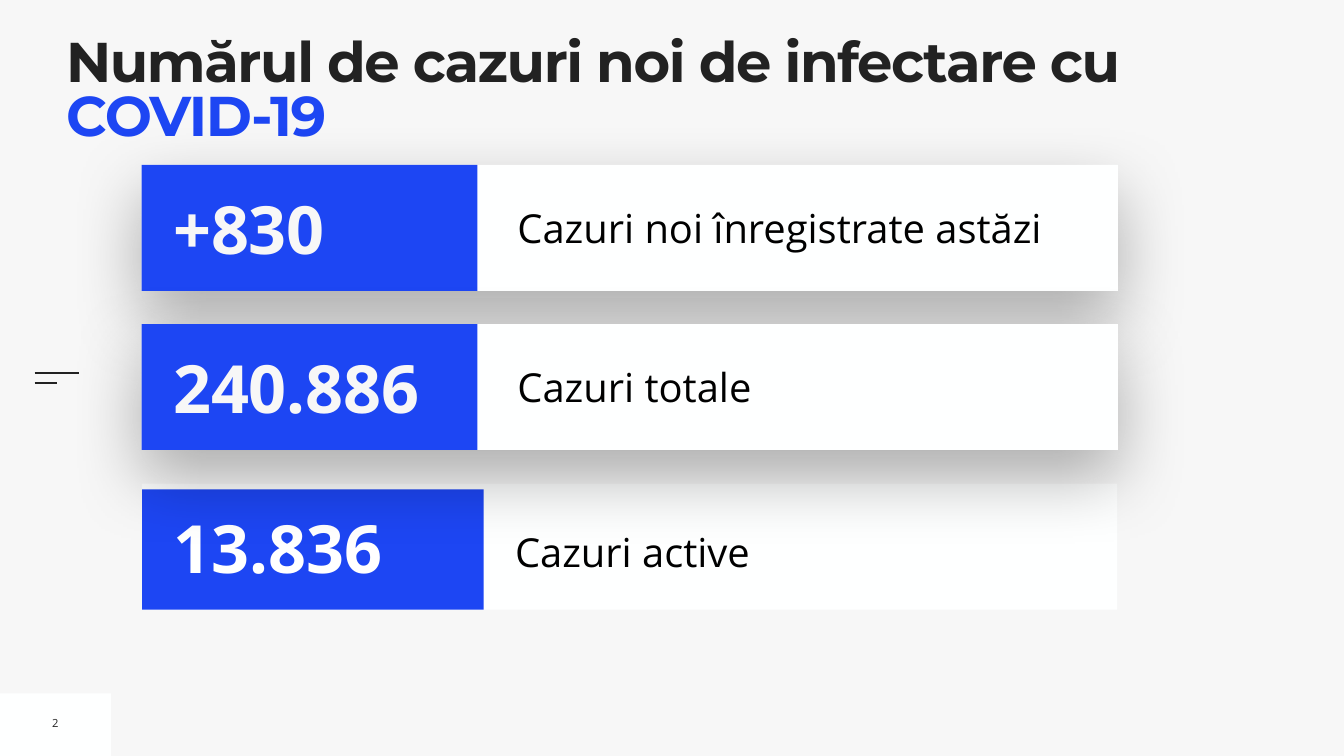
"""Build the slide with the daily COVID-19 case counts."""
from dataclasses import dataclass

from lxml.etree import SubElement
from pptx import Presentation
from pptx.dml.color import RGBColor as Rgb
from pptx.enum.shapes import MSO_CONNECTOR as Link, MSO_SHAPE as Form
from pptx.enum.text import MSO_ANCHOR as Anchor, MSO_AUTO_SIZE as Fit, PP_ALIGN as Align
from pptx.oxml import parse_xml
from pptx.oxml.ns import nsdecls, qn
from pptx.util import Cm, Pt


@dataclass(frozen=True)
class Theme:
    """Colours, fonts and type sizes."""
    back: Rgb = Rgb(0xF7, 0xF7, 0xF7)
    panel: Rgb = Rgb(0xFE, 0xFF, 0xFF)
    blue: Rgb = Rgb(0x1D, 0x46, 0xF3)
    dark: Rgb = Rgb(0x22, 0x22, 0x22)
    black: Rgb = Rgb(0, 0, 0)
    white: Rgb = Rgb(0xFF, 0xFF, 0xFF)
    head: str = "Montserrat"
    body: str = "Open Sans"
    title: int = 80
    count: int = 95
    label: int = 57
    page: int = 16


@dataclass(frozen=True)
class Box:
    """A rectangle in centimetres."""
    x: float
    y: float
    w: float
    h: float

    def cm(self) -> tuple:
        """Return the four lengths for a shape call."""
        return Cm(self.x), Cm(self.y), Cm(self.w), Cm(self.h)


@dataclass(frozen=True)
class Card:
    """A white panel with a blue count and a label."""
    count: str
    label: str
    panel: Box
    tag: Box
    value: Box
    text: Box
    tint: Rgb
    raised: bool = True


THEME = Theme()


def raised(count: str, label: str, y: float) -> Card:
    """Lay out a shadowed card from its top edge."""
    return Card(count, label, Box(7.14, y, 49.2, 6.35), Box(7.14, y, 16.92, 6.35),
                Box(8.48, y + 0.88, 15.32, 4.57), Box(25.83, y + 1.7, 29.87, 2.95),
                THEME.back)


CARDS = (
    Card("13.836", "Cazuri active", Box(7.16, 24.38, 49.15, 6.35),
         Box(7.16, 24.66, 17.22, 6.07), Box(8.51, 25.27, 15.32, 4.57),
         Box(25.96, 25.86, 29.41, 3.18), THEME.white, False),
    raised("+830", "Cazuri noi înregistrate astăzi", 8.31),
    raised("240.886", "Cazuri totale", 16.33),
)
RULES = ((18.82, 2.24), (19.28, 1.12))


def add_rect(slide, box: Box, fill: Rgb):
    """Add a plain filled rectangle."""
    rect = slide.shapes.add_shape(Form.RECTANGLE, *box.cm())
    rect.shadow.inherit = False
    rect.fill.solid()
    rect.fill.fore_color.rgb = fill
    rect.line.fill.background()
    return rect


def add_shadow(shape) -> None:
    """Cast a soft shadow below a shape."""
    props = shape._element.spPr
    props.remove(props.find(qn("a:effectLst")))
    props.append(parse_xml(
        f'<a:effectLst {nsdecls("a")}><a:outerShdw blurRad="{Pt(100)}" dist="{Pt(40)}" '
        'dir="5400000" rotWithShape="0"><a:srgbClr val="000000"><a:alpha val="30000"/>'
        '</a:srgbClr></a:outerShdw></a:effectLst>'))


def add_text(slide, box: Box, text: str, size: int, tint: Rgb,
             bold: bool = False, inset: float = 0.25, wrap: bool = True):
    """Add a middle-anchored line of text and return its paragraph."""
    frame = slide.shapes.add_textbox(*box.cm()).text_frame
    frame.word_wrap = wrap
    frame.vertical_anchor = Anchor.MIDDLE
    frame.margin_left = frame.margin_right = Cm(inset)
    frame.margin_top = frame.margin_bottom = Cm(inset)
    para = frame.paragraphs[0]
    para.text = text
    font = para.font
    font.name, font.size, font.bold = THEME.body, Pt(size), bold
    font.color.rgb = tint
    return para


def add_rule(slide, y: float, w: float) -> None:
    """Add a short line at the left edge."""
    rule = slide.shapes.add_connector(Link.STRAIGHT, Cm(1.75), Cm(y), Cm(1.75 + w), Cm(y))
    rule.line.color.rgb = THEME.dark
    rule.line.width = Pt(3)
    SubElement(rule._element.spPr, qn("a:effectLst"))


def add_card(slide, card: Card) -> None:
    """Draw one card, label first and count last."""
    panel = add_rect(slide, card.panel, THEME.panel)
    inset = 0.25 if card.raised else 0
    label = add_text(slide, card.text, card.label, THEME.label, THEME.black, inset=inset)
    if card.raised:
        add_shadow(panel)
    else:
        label.line_spacing, label.space_before = 1.3, Pt(20)
    add_rect(slide, card.tag, THEME.blue)
    add_text(slide, card.value, card.count, THEME.count, card.tint, bold=True)


def set_title(slide) -> None:
    """Place and format the title."""
    title = slide.shapes.title
    title.left, title.top, title.width, title.height = Box(3.33, 1.98, 60.81, 4.01).cm()
    frame = title.text_frame
    frame.auto_size, frame.word_wrap = Fit.NONE, True
    frame.vertical_anchor = Anchor.TOP
    frame.margin_left = frame.margin_right = frame.margin_top = frame.margin_bottom = 0
    para = frame.paragraphs[0]
    para.alignment, para.line_spacing = Align.LEFT, 0.8
    font = para.font
    font.name, font.size, font.bold = THEME.head, Pt(THEME.title), True
    for text, tint in (("Numărul de cazuri noi de infectare cu ", THEME.dark),
                       ("COVID-19", THEME.blue)):
        run = para.add_run()
        run.text = text
        run.font.color.rgb = tint
        run._r.get_or_add_rPr().set("spc", "-200")


def main() -> None:
    """Build and save the deck."""
    deck = Presentation()
    deck.slide_width, deck.slide_height = Cm(67.74), Cm(38.1)
    slide = deck.slides.add_slide(deck.slide_layouts[5])
    slide.background.fill.solid()
    slide.background.fill.fore_color.rgb = THEME.back
    add_rect(slide, Box(0, 34.95, 5.59, 3.15), THEME.panel)
    for y, w in RULES:
        add_rule(slide, y, w)
    page = add_text(slide, Box(2.36, 35.79, 0.86, 1.3), "2", THEME.page, THEME.dark, wrap=False)
    page.alignment = Align.CENTER
    set_title(slide)
    for card in CARDS:
        add_card(slide, card)
    deck.save("out.pptx")


if __name__ == "__main__":
    main()
